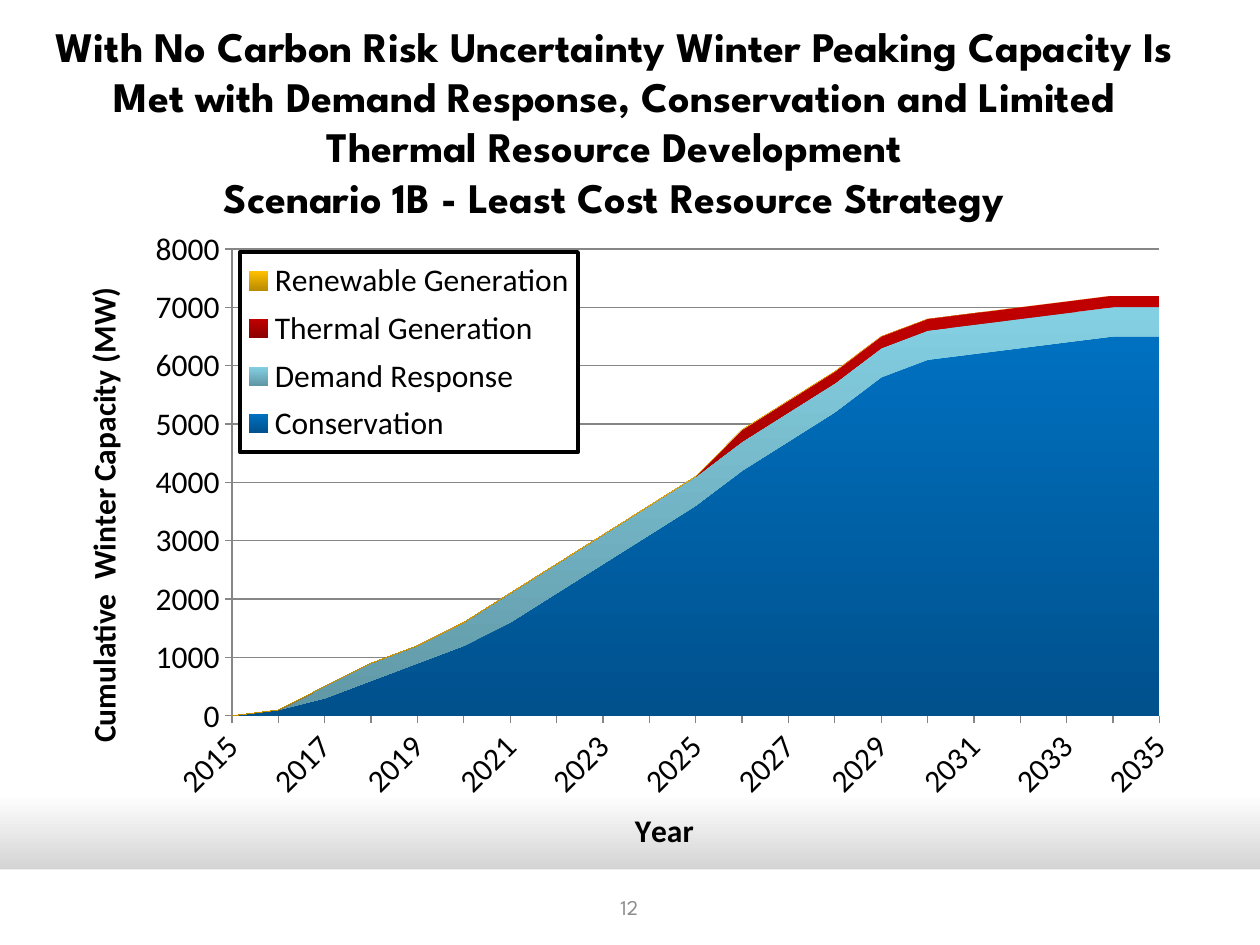
import dataclasses

import pptx
import pptx.chart.data
import pptx.dml.color
import pptx.enum.chart
import pptx.enum.shapes
import pptx.enum.text
import pptx.oxml
import pptx.util
from lxml import etree


@dataclasses.dataclass(frozen=True)
class Theme:
    heading_font: str = "League Spartan"
    chart_font: str = "Calibri"
    title_size: int = 24
    chart_size: int = 18
    number_size: int = 12
    black: str = "000000"
    white: str = "FFFFFF"
    shade: str = "A6A6A6"
    grid: str = "868686"
    number: str = "8C8C8C"


THEME = Theme()
WIDTH, HEIGHT = 10, 7.5
YEARS = [str(year) for year in range(2015, 2036)]

# Name, colour at the top, colour at the bottom, megawatts by year
SERIES = [
    ("Conservation", "0070C0", "00518C",
     [None, 100, 300, 600, 900, 1200, 1600, 2100, 2600, 3100, 3600,
      4200, 4700, 5200, 5800, 6100, 6200, 6300, 6400, 6500, 6500]),
    ("Demand Response", "84D0E3", "6097A5",
     [None, 0, 200, 300, 300, 400] + [500] * 15),
    ("Thermal Generation", "C00000", "8C0000",
     [None] + [0] * 10 + [200] * 10),
    ("Renewable Generation", "FFC000", "BA8C00",
     [None] + [0] * 20),
]


def color(value):
    return pptx.dml.color.RGBColor.from_string(value)


def area(left, top, width, height):
    """Turn shares of the slide into a position and size."""
    return [pptx.util.Inches(share * side) for share, side in
            zip((left, top, width, height), (WIDTH, HEIGHT) * 2)]


def set_font(font, name, size, value, bold=False):
    font.name = name
    font.size = pptx.util.Pt(size)
    font.bold = bold
    font.color.rgb = color(value)


def set_gradient(fill, start, end, first=0):
    """Run a gradient downwards between two colours."""
    fill.gradient()
    fill.gradient_angle = 270
    for stop, value, position in zip(fill.gradient_stops, (start, end), (first, 1)):
        stop.color.rgb = color(value)
        stop.position = position


def set_text(box, text, size, value, bold=False):
    frame = box.text_frame
    frame.word_wrap = True
    frame.auto_size = pptx.enum.text.MSO_AUTO_SIZE.NONE
    frame.vertical_anchor = pptx.enum.text.MSO_ANCHOR.MIDDLE
    frame.text = text
    para = frame.paragraphs[0]
    para.alignment = pptx.enum.text.PP_ALIGN.CENTER
    for span in para.runs:
        set_font(span.font, THEME.heading_font, size, value, bold)


def add_background(page):
    set_gradient(page.background.fill, THEME.white, THEME.shade, 0.84)
    band = page.shapes.add_shape(pptx.enum.shapes.MSO_SHAPE.RECTANGLE,
                                 *area(0, 0.92, 1, 0.08))
    band.shadow.inherit = False
    band.fill.solid()
    band.fill.fore_color.rgb = color(THEME.white)
    band.line.fill.background()


def add_title(page, text):
    title = page.shapes.title
    title.left, title.top, title.width, title.height = area(0.025, 0.023, 0.925, 0.21)
    set_text(title, text, THEME.title_size, THEME.black, True)


def add_page_number(page, text):
    box = page.shapes.add_textbox(*area(0.383, 0.933, 0.233, 0.053))
    set_text(box, text, THEME.number_size, THEME.number)


def make_layout(left, top, width, height, inner=False):
    """Describe a manual layout in shares of the chart."""
    layout = pptx.oxml.parse_xml(
        '<c:layout xmlns:c="http://schemas.openxmlformats.org/drawingml/2006/chart">'
        "<c:manualLayout/></c:layout>")
    namespace = "{%s}" % layout.nsmap["c"]
    settings = [("layoutTarget", "inner")] if inner else []
    settings += [("xMode", "edge"), ("yMode", "edge"),
                 ("x", left), ("y", top), ("w", width), ("h", height)]
    for name, value in settings:
        etree.SubElement(layout[0], namespace + name).set("val", str(value))
    return layout


def style_axis(axis, title):
    axis.axis_title.text_frame.text = title
    span = axis.axis_title.text_frame.paragraphs[0].runs[0]
    set_font(span.font, THEME.chart_font, THEME.chart_size, THEME.black, True)
    set_font(axis.tick_labels.font, THEME.chart_font, THEME.chart_size, THEME.black)
    axis.major_tick_mark = pptx.enum.chart.XL_TICK_MARK.OUTSIDE
    axis.format.line.color.rgb = color(THEME.grid)


def style_axes(chart):
    years, capacity = chart.category_axis, chart.value_axis
    style_axis(years, "Year")
    style_axis(capacity, "Cumulative  Winter Capacity (MW)")
    capacity.minimum_scale, capacity.maximum_scale = 0, 8000
    capacity.major_unit = 1000
    capacity.has_major_gridlines = True
    capacity.major_gridlines.format.line.color.rgb = color(THEME.grid)
    capacity.tick_labels.number_format = "0"
    capacity.tick_labels.number_format_is_linked = False

    # Areas start on the axis; every second year is labelled, at a slant
    capacity._element.find("{*}crossBetween").set("val", "midCat")
    years._element.find("{*}txPr/{*}bodyPr").set("rot", "-2700000")
    no_multi_level = years._element.find("{*}noMultiLvlLbl")
    skip = etree.Element(no_multi_level.tag.replace("noMultiLvlLbl", "tickLblSkip"))
    skip.set("val", "2")
    no_multi_level.addprevious(skip)


def style_legend(chart):
    chart.has_legend = True
    legend = chart.legend
    legend.position = pptx.enum.chart.XL_LEGEND_POSITION.RIGHT
    legend.include_in_layout = False
    set_font(legend.font, THEME.chart_font, THEME.chart_size, THEME.black)
    element = legend._element
    for old in element.findall("{*}layout"):
        element.remove(old)
    element.find("{*}legendPos").addnext(make_layout(0.156, 0.05, 0.298, 0.313))
    frame = pptx.oxml.parse_xml(
        '<c:spPr xmlns:c="http://schemas.openxmlformats.org/drawingml/2006/chart" '
        'xmlns:a="http://schemas.openxmlformats.org/drawingml/2006/main">'
        f'<a:solidFill><a:srgbClr val="{THEME.white}"/></a:solidFill>'
        f'<a:ln w="28575"><a:solidFill><a:srgbClr val="{THEME.black}"/></a:solidFill>'
        "</a:ln></c:spPr>")
    element.find("{*}txPr").addprevious(frame)


def add_capacity_chart(page):
    data = pptx.chart.data.CategoryChartData(number_format="0")
    data.categories = YEARS
    for name, _, _, values in SERIES:
        data.add_series(name, values)
    chart = page.shapes.add_chart(pptx.enum.chart.XL_CHART_TYPE.AREA_STACKED,
                                  *area(0.05, 0.233, 0.9, 0.677), data).chart
    chart.has_title = False
    set_font(chart.font, THEME.chart_font, THEME.chart_size, THEME.black)
    chart.plots[0].vary_by_categories = False
    for series, (_, top, bottom, _) in zip(chart.plots[0].series, SERIES):
        set_gradient(series.format.fill, top, bottom)
    style_axes(chart)
    style_legend(chart)

    # Fixed plot area
    plot_area = chart._chartSpace.find("{*}chart/{*}plotArea")
    for old in plot_area.findall("{*}layout"):
        plot_area.remove(old)
    plot_area.insert(0, make_layout(0.149, 0.045, 0.818, 0.73, inner=True))


def main():
    deck = pptx.Presentation()
    deck.slide_width = pptx.util.Inches(WIDTH)
    deck.slide_height = pptx.util.Inches(HEIGHT)
    page = deck.slides.add_slide(deck.slide_layouts[5])
    add_background(page)
    add_title(page, "With No Carbon Risk Uncertainty Winter Peaking Capacity Is Met "
                    "with Demand Response, Conservation and Limited Thermal Resource "
                    "Development\vScenario 1B - Least Cost Resource Strategy")
    add_capacity_chart(page)
    add_page_number(page, "12")
    deck.save("out.pptx")


if __name__ == "__main__":
    main()
